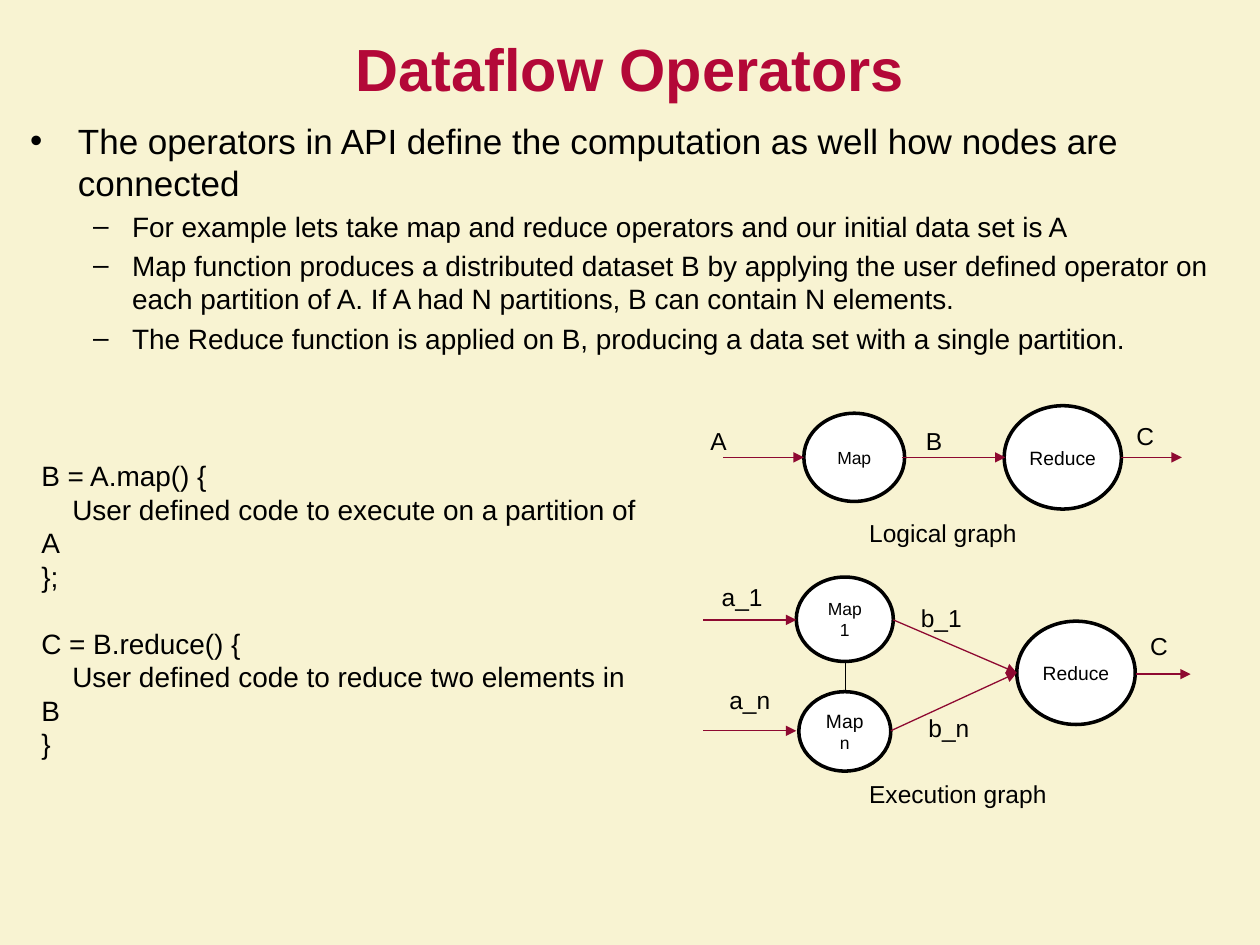
from lxml import etree
from pptx import Presentation
from pptx.dml.color import RGBColor
from pptx.enum.shapes import MSO_CONNECTOR, MSO_SHAPE
from pptx.enum.text import MSO_ANCHOR, PP_ALIGN
from pptx.oxml.ns import qn
from pptx.util import Inches, Pt

STRAIGHT = MSO_CONNECTOR.STRAIGHT
ELLIPSE = MSO_SHAPE.OVAL
MIDDLE, TOP = MSO_ANCHOR.MIDDLE, MSO_ANCHOR.TOP
LEFT, CENTER = PP_ALIGN.LEFT, PP_ALIGN.CENTER

THEME = {
    "font": "Arial",
    "background": RGBColor(0xF8, 0xF3, 0xD2),
    "title": RGBColor(0xB3, 0x08, 0x38),
    "text": RGBColor(0x00, 0x00, 0x00),
    "node": RGBColor(0xFF, 0xFF, 0xFF),
    "arrow": RGBColor(0x8E, 0x09, 0x31),
    "title_size": 34,
    "point_size": 20,
    "body_size": 16,
    "label_size": 14,
    "reduce_size": 11,
    "map_size": 10,
}

presentation = Presentation()
presentation.slide_width, presentation.slide_height = Inches(10), Inches(7.5)

# Grid of 100 columns by 75 rows
COLUMN = presentation.slide_width / 100
ROW = presentation.slide_height / 75


def grid(*lengths):
    """Turn alternating columns and rows into slide lengths."""
    return [round(n * (ROW if i % 2 else COLUMN)) for i, n in enumerate(lengths)]


def write(shape, text, sizes, color=THEME["text"], align=LEFT, anchor=TOP, wrap=True):
    """Fill a shape with text; sizes holds one type size per paragraph."""
    text_frame = shape.text_frame
    text_frame.text = text
    text_frame.word_wrap = wrap
    text_frame.vertical_anchor = anchor
    for paragraph, size in zip(text_frame.paragraphs, sizes):
        paragraph.alignment = align
        for run in paragraph.runs:
            run.font.name = THEME["font"]
            run.font.size = Pt(size)
            run.font.color.rgb = color
    return text_frame.paragraphs


slide = presentation.slides.add_slide(presentation.slide_layouts[5])
slide.background.fill.solid()
slide.background.fill.fore_color.rgb = THEME["background"]

# Title
title = slide.shapes.title
title.left, title.top, title.width, title.height = grid(0, 0.3, 100, 10.1)
heading = write(title, "Dataflow Operators", [THEME["title_size"]],
                THEME["title"], CENTER, MIDDLE)
heading[0].runs[0].font.bold = True

# Bullets: character, size, left margin and hanging indent in inches, text
bullets = [
    ("•", THEME["point_size"], 0.38, 0.38,
     "The operators in API define the computation as well how nodes are connected"),
] + [("–", THEME["body_size"], 0.81, 0.31, text) for text in (
    "For example lets take map and reduce operators and our initial data set is A",
    "Map function produces a distributed dataset B by applying the user defined "
    "operator on each partition of A. If A had N partitions, B can contain N elements.",
    "The Reduce function is applied on B, producing a data set with a single partition.",
)]
body = slide.shapes.add_textbox(*grid(1.4, 9, 97.2, 22.3))
paragraphs = write(body, "\n".join(bullet[-1] for bullet in bullets),
                   [bullet[1] for bullet in bullets])
for index, (paragraph, bullet) in enumerate(zip(paragraphs, bullets)):
    character, size, margin, hanging, _ = bullet
    properties = paragraph._p.get_or_add_pPr()
    properties.set("marL", str(Inches(margin)))
    properties.set("indent", str(-Inches(hanging)))
    etree.SubElement(properties, qn("a:buFont"), typeface=THEME["font"])
    etree.SubElement(properties, qn("a:buChar"), char=character)
    if index:
        paragraph.level = 1
        paragraph.space_before = Pt(0.2 * size)

# Code, with one line of space before the second statement
code_lines = [
    "B = A.map() {",
    "    User defined code to execute on a partition of A",
    "};",
    "C = B.reduce() {",
    "    User defined code to reduce two elements in B",
    "}",
]
code = slide.shapes.add_textbox(*grid(2.3, 35.9, 50.1, 25.2))
paragraphs = write(code, "\n".join(code_lines), [THEME["body_size"]] * len(code_lines))
paragraphs[3].space_before = Pt(19)

# Nodes of both graphs: text, paragraph sizes, inset in inches, place
map_size, reduce_size = THEME["map_size"], THEME["reduce_size"]
nodes = [
    ("Map", [map_size], 0.1, (63.8, 32.8, 8, 7)),
    ("Reduce", [reduce_size], 0, (79.7, 32.2, 9.3, 8.2)),
    ("Map 1", [map_size], 0.1, (63.2, 45.8, 7.7, 6.7)),
    ("Map\nn", [reduce_size, map_size], 0.1, (63.4, 54.9, 7.3, 6.3)),
    ("Reduce", [reduce_size], 0, (80.7, 49.3, 9.4, 8.2)),
]
for text, sizes, inset, place in nodes:
    node = slide.shapes.add_shape(ELLIPSE, *grid(*place))
    node.shadow.inherit = False
    node.fill.solid()
    node.fill.fore_color.rgb = THEME["node"]
    node.line.color.rgb = THEME["text"]
    node.line.width = Pt(2)
    write(node, text, sizes, align=CENTER, anchor=MIDDLE)
    text_frame = node.text_frame
    text_frame.margin_left = text_frame.margin_right = Inches(inset)
    text_frame.margin_top = text_frame.margin_bottom = Inches(inset / 2)

# Edges: start column and row, end column and row, arrowhead
edges = [
    ((57.4, 36.3, 63.8, 36.3), True),
    ((71.6, 36.3, 79.8, 36.3), True),
    ((89, 36.3, 93.8, 36.3), True),
    ((55.8, 49.2, 63.2, 49.2), True),
    ((55.8, 58, 63.2, 58), True),
    ((70.9, 49.2, 80.7, 53.4), True),
    ((70.7, 58, 80.7, 53.4), True),
    ((90.2, 53.5, 94.5, 53.5), True),
    ((67.1, 52.5, 67.1, 54.9), False),
]
for ends, has_head in edges:
    edge = slide.shapes.add_connector(STRAIGHT, *grid(*ends))
    edge.line.color.rgb = THEME["arrow"] if has_head else THEME["text"]
    edge.line.width = Pt(0.75)
    if has_head:
        etree.SubElement(edge.line._get_or_add_ln(), qn("a:tailEnd"), type="triangle")
    etree.SubElement(edge._element.spPr, qn("a:effectLst"))

# Labels and captions: text, left column, top row, width in columns
labels = [
    ("A", 55.4, 33.3, 3.4),
    ("B", 72.5, 33.3, 3.4),
    ("C", 89.2, 32.9, 3.5),
    ("Logical graph", 68, 40.6, 13.8),
    ("a_1", 56.3, 45.7, 5.3),
    ("a_n", 56.9, 53.9, 5.3),
    ("b_1", 72.1, 47.4, 5.3),
    ("b_n", 72.7, 56.1, 5.3),
    ("C", 90.3, 49.6, 3.5),
    ("Execution graph", 68, 61.3, 16.3),
]
for text, left, top, width in labels:
    label = slide.shapes.add_textbox(*grid(left, top, width, 3.4))
    write(label, text, [THEME["label_size"]], wrap=False)

presentation.save("out.pptx")
